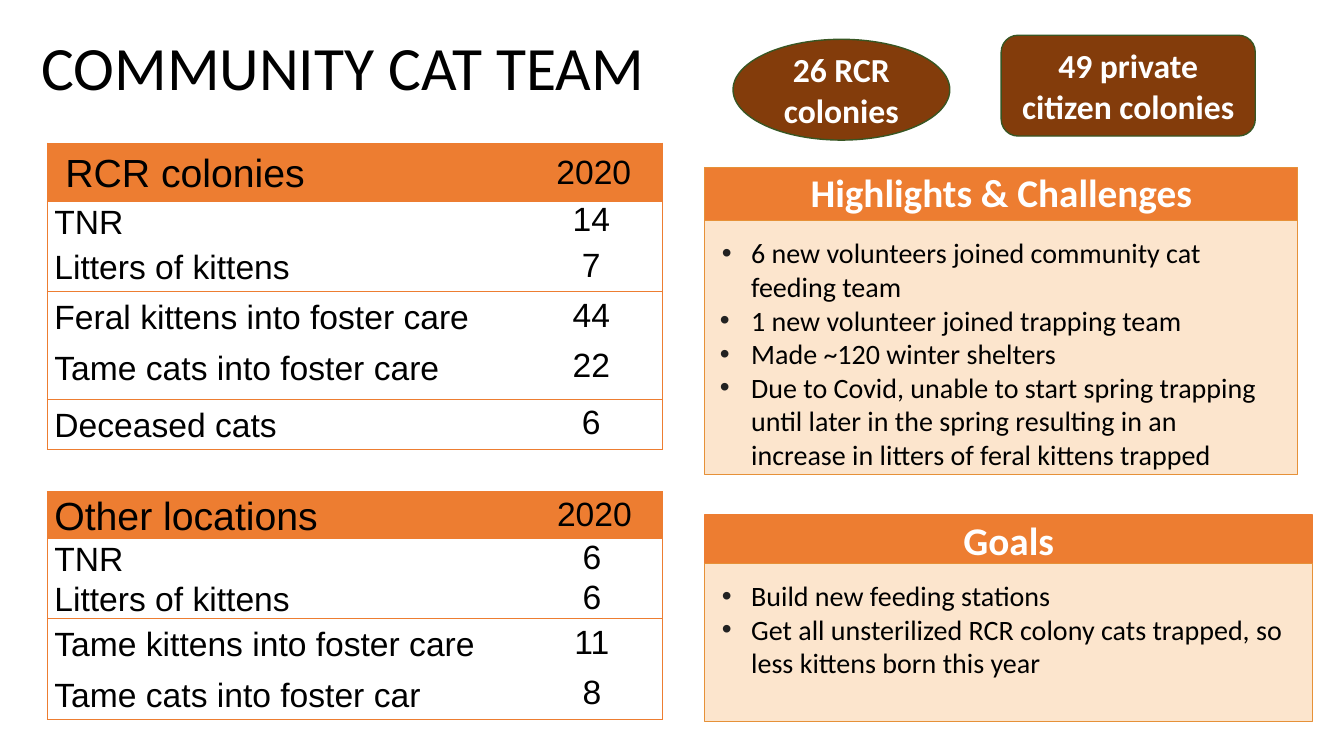
from lxml import etree
from pptx import Presentation
from pptx.dml.color import RGBColor
from pptx.enum import shapes, text
from pptx.oxml import ns
from pptx.util import Inches, Pt

ORANGE = RGBColor(0xED, 0x7D, 0x31)
AMBER = RGBColor(0xE6, 0x91, 0x38)
CREAM = RGBColor(0xFC, 0xE5, 0xCD)
BROWN = RGBColor(0x83, 0x3C, 0x0B)
GREEN = RGBColor(0x38, 0x56, 0x23)
BLACK = RGBColor(0, 0, 0)
WHITE = RGBColor(0xFF, 0xFF, 0xFF)
BULLET_COLOR = "222222"
NO_GRID_STYLE = "{2D5ABB26-0587-4C30-8999-92F81FD0307C}"

RCR_ROWS = [
    (" RCR colonies", "2020", 0.58),
    ("TNR", "14", 0.39),
    ("Litters of kittens", "7", 0.48),
    ("Feral kittens into foster care", "44", 0.44),
    ("Tame cats into foster care", "22", 0.57),
    ("Deceased cats", "6", 0.48),
]
OTHER_ROWS = [
    ("Other locations", "2020", 0.1),
    ("TNR", "6", 0.33),
    ("Litters of kittens", "6", 0.33),
    ("Tame kittens into foster care", "11", 0.33),
    ("Tame cats into foster car", "8", 0.33),
]
HIGHLIGHTS = [
    ("6 new volunteers joined community cat feeding team", 0.29),
    ("1 new volunteer joined trapping team", 0.33),
    ("Made ~120 winter shelters", 0.33),
    ("Due to Covid, unable to start spring trapping until later in the spring "
     "resulting in an increase in litters of feral kittens trapped", 0.33),
]
GOALS = [
    ("Build new feeding stations", 0.29),
    ("Get all unsterilized RCR colony cats trapped, so less kittens born this year", 0.29),
]


def add_xml(parent, tag, **attrs):
    return etree.SubElement(parent, ns.qn(tag), attrs)


def place(sp, left, top, width, height):
    sp.left, sp.top = Inches(left), Inches(top)
    sp.width, sp.height = Inches(width), Inches(height)


def paint(sp, fill, line):
    sp.fill.solid()
    sp.fill.fore_color.rgb = fill
    sp.line.color.rgb = line
    sp.line.width = Pt(1)


def set_margins(box, left, top, right, bottom):
    box.margin_left, box.margin_top = Inches(left), Inches(top)
    box.margin_right, box.margin_bottom = Inches(right), Inches(bottom)


def style(p, size, color, name="Calibri", bold=False):
    p.font.size, p.font.name, p.font.bold = Pt(size), name, bold
    p.font.color.rgb = color


def add_title(s, title):
    sp = s.shapes.title
    place(sp, 0.31, -0.03, 11.5, 1.45)
    tf = sp.text_frame
    tf.text = title
    tf.auto_size = text.MSO_AUTO_SIZE.NONE
    tf.vertical_anchor = text.MSO_ANCHOR.MIDDLE
    p = tf.paragraphs[0]
    p.alignment = text.PP_ALIGN.LEFT
    p.line_spacing = 0.9
    style(p, 44, BLACK)


def add_label(s, kind, box, caption, size, fill, line):
    sp = s.shapes.add_shape(kind, *map(Inches, box))
    sp.shadow.inherit = False
    paint(sp, fill, line)
    tf = sp.text_frame
    tf.text = caption
    tf.word_wrap = True
    tf.vertical_anchor = text.MSO_ANCHOR.MIDDLE
    p = tf.paragraphs[0]
    p.alignment = text.PP_ALIGN.CENTER
    style(p, size, WHITE, bold=True)
    return sp


def add_bullet(p, hang):
    pPr = p._p.get_or_add_pPr()
    pPr.set("marL", str(Inches(0.31)))
    pPr.set("indent", str(-Inches(hang)))
    add_xml(add_xml(pPr, "a:buClr"), "a:srgbClr", val=BULLET_COLOR)
    add_xml(pPr, "a:buFont", typeface="Arial")
    add_xml(pPr, "a:buChar", char="•")


def add_panel(s, body, heading, header_box, body_box, header_line, items):
    header = add_label(s, shapes.MSO_SHAPE.RECTANGLE, header_box, heading, 28,
                       ORANGE, header_line)
    set_margins(header.text_frame, 0.2, 0.12, 0.2, 0.12)
    header.text_frame.paragraphs[0].line_spacing = 0.9
    body._element.addprevious(header._element)

    place(body, *body_box)
    paint(body, CREAM, AMBER)
    tf = body.text_frame
    tf.auto_size = text.MSO_AUTO_SIZE.NONE
    tf.vertical_anchor = text.MSO_ANCHOR.TOP
    set_margins(tf, 0.15, 0.15, 0.2, 0.23)
    for i, (item, hang) in enumerate(items):
        p = tf.add_paragraph() if i else tf.paragraphs[0]
        p.text = item
        p.level = 1
        add_bullet(p, hang)
        p.space_before = Pt(0)
        style(p, 20, BLACK)


def add_borders(cell, sides):
    tcPr = cell._tc.get_or_add_tcPr()
    for i, side in enumerate(sides):
        ln = add_xml(tcPr, f"a:ln{side}", w=str(Pt(0.75)))
        add_xml(add_xml(ln, "a:solidFill"), "a:srgbClr", val=str(ORANGE))
        tcPr.insert(i, ln)


def fill_cell(cell, value, is_header, is_count, pad):
    cell.text = value
    set_margins(cell, 0.07, pad, 0.07, pad)
    p = cell.text_frame.paragraphs[0]
    if is_count:
        p.alignment = text.PP_ALIGN.CENTER
    else:
        p.line_spacing = 1.07
    if is_header:
        cell.vertical_anchor = text.MSO_ANCHOR.MIDDLE
        cell.fill.solid()
        cell.fill.fore_color.rgb = ORANGE
        if is_count:
            p._p.get_or_add_pPr().set("marL", str(Inches(0.05)))
    else:
        cell.fill.background()
    style(p, 28 if is_header and not is_count else 24, BLACK, "Arial")


def add_counts(s, top, rows, widths, tight_rows):
    height = sum(row[2] for row in rows)
    frame = s.shapes.add_table(len(rows), 2, Inches(0.47), Inches(top),
                               Inches(sum(widths)), Inches(height))
    table = frame.table
    table.first_row = table.horz_banding = False
    table._tbl.tblPr.find(ns.qn("a:tableStyleId")).text = NO_GRID_STYLE
    for column, width in zip(table.columns, widths):
        column.width = Inches(width)
    for r, (label, count, row_height) in enumerate(rows):
        table.rows[r].height = Inches(row_height)
        ruled = r % 2 == 0 or r == len(rows) - 1
        for c, value in enumerate((label, count)):
            cell = table.cell(r, c)
            fill_cell(cell, value, r == 0, c == 1, 0 if r < tight_rows else 0.05)
            add_borders(cell, "LR"[c] + ("T" if r == 0 else "") + ("B" if ruled else ""))


def main():
    prs = Presentation()
    prs.slide_width, prs.slide_height = Inches(13.33), Inches(7.5)
    s = prs.slides.add_slide(prs.slide_layouts[3])
    highlights, goals = s.placeholders[1], s.placeholders[2]

    add_title(s, "COMMUNITY CAT TEAM")
    add_panel(s, highlights, "Highlights & Challenges", (6.99, 1.66, 5.88, 0.54),
              (6.99, 2.19, 5.88, 2.52), AMBER, HIGHLIGHTS)
    add_panel(s, goals, "Goals", (6.99, 5.11, 6.03, 0.56),
              (6.99, 5.59, 6.03, 1.57), ORANGE, GOALS)
    add_counts(s, 1.42, RCR_ROWS, (4.69, 1.41), 2)
    add_counts(s, 4.88, OTHER_ROWS, (4.7, 1.4), 3)
    add_label(s, shapes.MSO_SHAPE.OVAL, (7.27, 0.39, 2.15, 1),
              "26 RCR colonies", 24, BROWN, GREEN)
    add_label(s, shapes.MSO_SHAPE.ROUNDED_RECTANGLE, (9.93, 0.35, 2.52, 1),
              "49 private citizen colonies", 24, BROWN, GREEN)
    prs.save("out.pptx")


if __name__ == "__main__":
    main()
